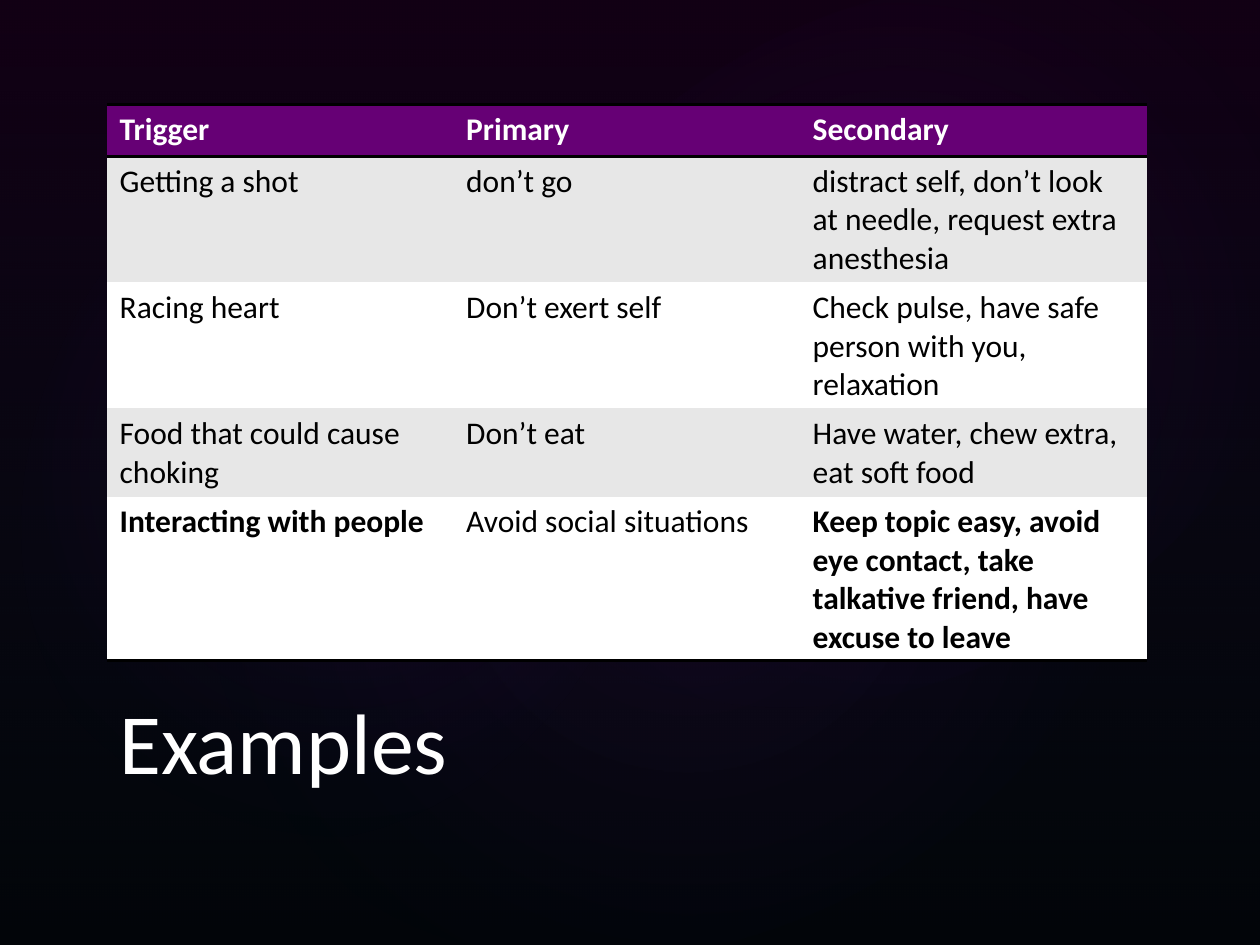
from lxml import etree
from pptx import Presentation
from pptx.dml.color import RGBColor
from pptx.enum.shapes import MSO_SHAPE
from pptx.enum.text import MSO_ANCHOR
from pptx.oxml import parse_xml
from pptx.oxml.ns import nsdecls, qn
from pptx.util import Inches, Pt

RECT, OVAL = MSO_SHAPE.RECTANGLE, MSO_SHAPE.OVAL
BOTTOM = MSO_ANCHOR.BOTTOM
BLACK = RGBColor(0x00, 0x00, 0x00)
WHITE = RGBColor(0xFF, 0xFF, 0xFF)
GREY = RGBColor(0xE7, 0xE7, 0xE7)
PURPLE = RGBColor(0x66, 0x00, 0x75)
PLUM = RGBColor(0x33, 0x00, 0x3A)
NAVY = RGBColor(0x1B, 0x38, 0x61)
PINK = RGBColor(0xE1, 0x13, 0xFF)
PLAIN = "{2D5ABB26-0587-4C30-8999-92F81FD0307C}"

LINEAR = '<a:lin ang="5400000" scaled="0"/>'
RADIAL = ('<a:path path="circle"><a:fillToRect l="50000" t="50000" '
          'r="50000" b="50000"/></a:path>')

GLOWS = [
    ((1.5, 1.14, 7.92, 6.24), 328.7, 7),
    ((-0.3, 1.28, 6.06, 4.9), 294.3, 8),
    ((3.58, 0.13, 7.09, 5.2), 328.7, 8),
]
ROWS = [
    ("Trigger", "Primary", "Secondary"),
    ("Getting a shot", "don’t go",
     "distract self, don’t look at needle, request extra anesthesia"),
    ("Racing heart", "Don’t exert self",
     "Check pulse, have safe person with you, relaxation"),
    ("Food that could cause choking", "Don’t eat",
     "Have water, chew extra, eat soft food"),
    ("Interacting with people", "Avoid social situations",
     "Keep topic easy, avoid eye contact, take talkative friend, "
     "have excuse to leave"),
]
BOLD = {(0, 0), (0, 1), (0, 2), (4, 0), (4, 2)}


def write(frame, text, color, form):
    """Put one styled run of text in a text frame."""
    run = frame.paragraphs[0].add_run()
    run.text = text
    run.font.color.rgb = color
    for name, value in form.items():
        setattr(run.font, name, value)


def add_glow(slide, kind, box, stops, shade, turn=0):
    """Add a lineless shape with a translucent gradient."""
    shape = slide.shapes.add_shape(kind, *map(Inches, box))
    shape.rotation = turn
    shape.shadow.inherit = False
    shape.line.fill.background()
    marks = "".join(
        f'<a:gs pos="{pos * 1000}"><a:srgbClr val="{color}">'
        f'<a:alpha val="{alpha * 1000}"/></a:srgbClr></a:gs>'
        for pos, color, alpha in stops)
    fill = parse_xml(f'<a:gradFill {nsdecls("a")} rotWithShape="1">'
                     f'<a:gsLst>{marks}</a:gsLst>{shade}</a:gradFill>')
    shape.element.spPr.find(qn("a:prstGeom")).addnext(fill)


def add_back(slide, box):
    """Paint the black ground, its tint and the soft glows."""
    ground = slide.background.fill
    ground.solid()
    ground.fore_color.rgb = BLACK
    add_glow(slide, RECT, box, [(0, PLUM, 36), (100, NAVY, 10)], LINEAR)
    for place, turn, alpha in GLOWS:
        stops = [(0, PINK, alpha), (58, NAVY, 0)]
        add_glow(slide, OVAL, place, stops, RADIAL, turn)


def add_title(slide, box):
    """Add the title at the foot of its box."""
    frame = slide.shapes.add_textbox(*map(Inches, box)).text_frame
    frame.word_wrap = True
    frame.vertical_anchor = BOTTOM
    write(frame, "Examples", WHITE, {"name": "Calibri", "size": Pt(49)})


def add_edge(cell, side):
    """Draw a black rule on one side of a cell."""
    edge = parse_xml(
        f'<a:{side} {nsdecls("a")} w="{Pt(2)}"><a:solidFill>'
        f'<a:srgbClr val="{BLACK}"/></a:solidFill></a:{side}>')
    cell._tc.get_or_add_tcPr().insert(0, edge)


def add_grid(slide, box):
    """Add the table of triggers with banded rows."""
    left, top, width, height = map(Inches, box)
    last = len(ROWS) - 1
    holder = slide.shapes.add_table(len(ROWS), len(ROWS[0]),
                                    left, top, width, height)
    next(holder.element.iter(qn("a:tableStyleId"))).text = PLAIN
    table = holder.table
    for r, texts in enumerate(ROWS):
        table.rows[r].height = Inches(0.41)
        for c, text in enumerate(texts):
            cell = table.cell(r, c)
            cell.fill.solid()
            cell.fill.fore_color.rgb = (
                PURPLE if r == 0 else GREY if r % 2 else WHITE)
            write(cell.text_frame, text, BLACK if r else WHITE,
                  {"name": "Calibri", "size": Pt(18), "bold": (r, c) in BOLD})
            if r in (0, last):
                add_edge(cell, "lnB")
            if r == 0:
                add_edge(cell, "lnT")


def main():
    """Build the slide and save it."""
    deck = Presentation()
    deck.slide_width, deck.slide_height = Inches(10), Inches(7.5)
    slide = deck.slides.add_slide(deck.slide_layouts[6])
    add_back(slide, (0, 0, 10, 7.5))
    add_title(slide, (0.85, 5.33, 8.25, 1))
    add_grid(slide, (0.85, 0.83, 8.25, 2.05))
    deck.save("out.pptx")


if __name__ == "__main__":
    main()
